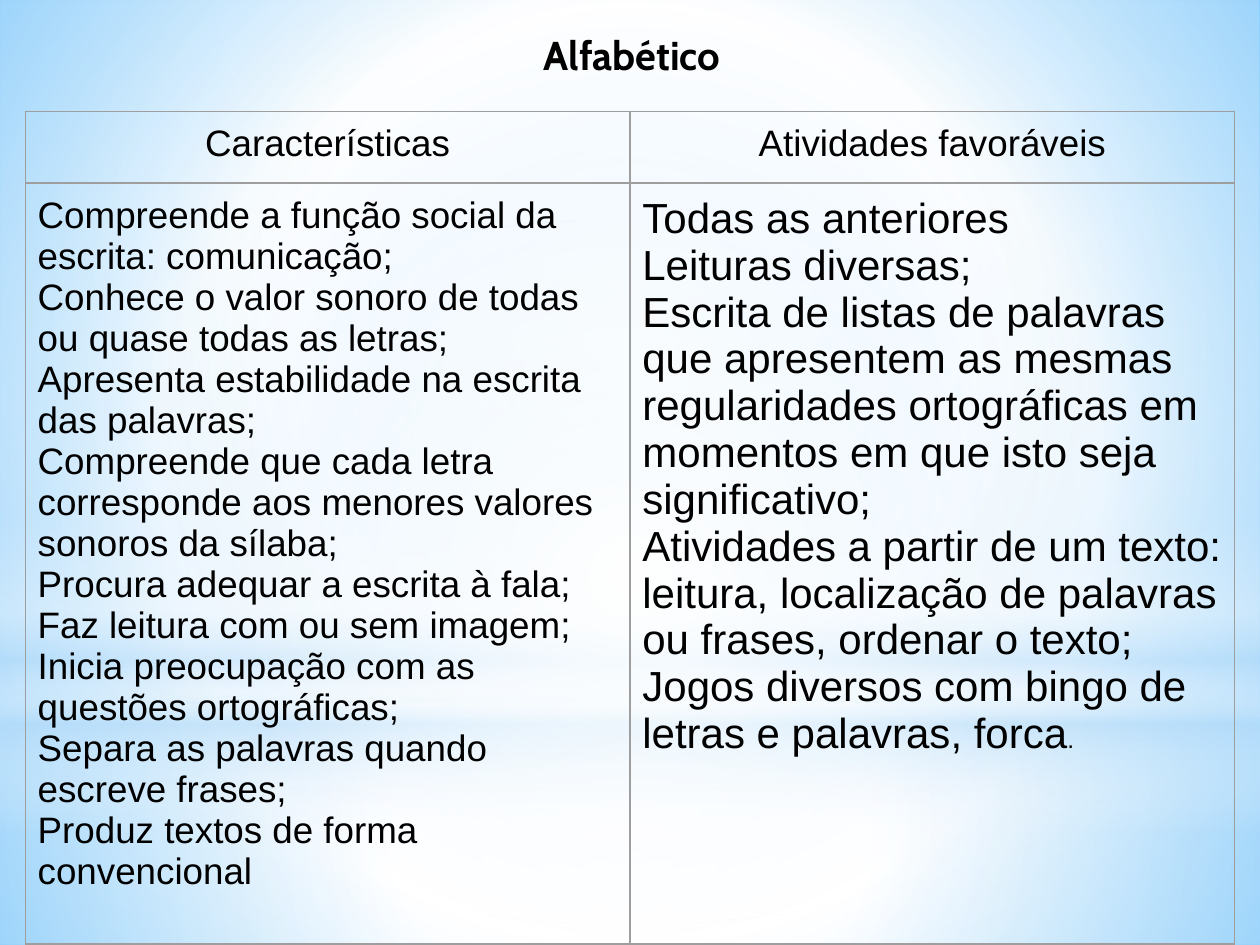
import lxml.etree
import pptx
import pptx.dml.color
import pptx.enum.shapes
import pptx.enum.text
import pptx.oxml.ns
import pptx.util

Cm, Pt = pptx.util.Cm, pptx.util.Pt
ALIGN = pptx.enum.text.PP_ALIGN
KIND = pptx.enum.shapes.MSO_SHAPE
WIDE, HIGH = 25.4, 19.05

COLORS = {
    "text": "000000",
    "grid": "9E9E9E",
    "white": "FFFFFF",
    "pale": "B4DCFA",
    "sky": "99D4FE",
    "blue": "54BDFF",
}

# Gradient stops: position %, colour, opacity %
BACK = [(0, "sky", 100), (60, "white", 100), (100, "blue", 100)]
LOWER = [(0, "white", 89), (37, "white", 74), (100, "pale", 77)]
UPPER = [(0, "white", 87), (48, "white", 60), (100, "pale", 77)]
STREAK = [(0, "white", 0), (29, "white", 28), (45, "pale", 40),
          (55, "white", 24), (65, "pale", 60), (100, "white", 0)]
GLOW = [(0, "white", 100), (56, "white", 0), (100, "white", 0)]

# Preset, top, height, stops, angle (None for a circular gradient)
LAYERS = [
    (KIND.RECTANGLE, 14.17, 4.88, LOWER, None),
    (KIND.RECTANGLE, 0, 14.17, UPPER, None),
    (KIND.RECTANGLE, 10.46, 6.35, STREAK, 90),
    (KIND.OVAL, 4.45, 14.17, GLOW, None),
]

HEADS = ["Características", "Atividades favoráveis"]
TRAITS = [
    "Compreende a função social da escrita: comunicação;",
    "Conhece o valor sonoro de todas ou quase todas as letras;",
    "Apresenta estabilidade na escrita das palavras;",
    "Compreende que cada letra corresponde aos menores valores sonoros "
    "da sílaba;",
    "Procura adequar a escrita à fala;",
    "Faz leitura com ou sem imagem;",
    "Inicia preocupação com as questões ortográficas;",
    "Separa as palavras quando escreve frases;",
    "Produz textos de forma convencional",
]
TASKS = [
    "Todas as anteriores",
    "Leituras diversas;",
    "Escrita de listas de palavras que apresentem as mesmas regularidades "
    "ortográficas em momentos em que isto seja significativo;",
    "Atividades a partir de um texto: leitura, localização de palavras ou "
    "frases, ordenar o texto;",
    "Jogos diversos com bingo de letras e palavras, forca",
]

BODY = {"name": "Arial", "size": Pt(21)}
LARGE = {"name": "Arial", "size": Pt(24)}
SMALL = {"name": "Arial", "size": Pt(14)}
TITLE = {"name": "Cabin", "size": Pt(23), "bold": True}
INSETS = {"margin_" + side: Cm(0.25)
          for side in ("left", "top", "right", "bottom")}


def apply(thing, form):
    for name, value in form.items():
        setattr(thing, name, value)


def add(parent, tag, **attrs):
    return lxml.etree.SubElement(parent, pptx.oxml.ns.qn(tag), attrs)


class Deck:
    """Holds the presentation's style and its current slide."""

    def __init__(self):
        self.prs = pptx.Presentation()
        apply(self.prs, {"slide_width": Cm(WIDE), "slide_height": Cm(HIGH)})
        self.slide = self.prs.slides.add_slide(self.prs.slide_layouts[5])

    def blend(self, fill, owner, stops, angle=None):
        """Give a fill its stops, circular unless an angle is set."""
        fill.gradient()
        grad = owner.xpath(".//a:gradFill")[0]
        for child in list(grad):
            grad.remove(child)
        group = add(grad, "a:gsLst")
        for pos, color, alpha in stops:
            stop = add(group, "a:gs", pos=str(pos * 1000))
            tone = add(stop, "a:srgbClr", val=COLORS[color])
            if alpha < 100:
                add(tone, "a:alpha", val=str(alpha * 1000))
        if angle is None:
            route = add(grad, "a:path", path="circle")
            add(route, "a:fillToRect", l="50000", t="50000",
                r="50000", b="50000")
        else:
            add(grad, "a:lin", ang=str(angle * 60000), scaled="0")

    def back(self, stops):
        self.blend(self.slide.background.fill, self.slide.element, stops)

    def layer(self, kind, top, high, stops, angle):
        shape = self.slide.shapes.add_shape(
            kind, 0, Cm(top), Cm(WIDE), Cm(high))
        shape.shadow.inherit = False
        shape.line.fill.background()
        self.blend(shape.fill, shape.element, stops, angle)

    def text(self, para, words, form, align=ALIGN.LEFT):
        para.alignment = align
        run = para.add_run()
        run.text = words
        apply(run.font, form)
        run.font.color.rgb = pptx.dml.color.RGBColor.from_string(
            COLORS["text"])

    def title(self, words, left, top, wide, high):
        shape = self.slide.shapes.title
        apply(shape, {"left": Cm(left), "top": Cm(top),
                      "width": Cm(wide), "height": Cm(high)})
        frame = shape.text_frame
        apply(frame, INSETS | {
            "word_wrap": True,
            "auto_size": pptx.enum.text.MSO_AUTO_SIZE.NONE,
            "vertical_anchor": pptx.enum.text.MSO_ANCHOR.TOP,
        })
        self.text(frame.paragraphs[0], words, TITLE, ALIGN.CENTER)
        shape.element.getparent().append(shape.element)  # bring to front

    def table(self, left, top, cols, rows):
        frame = self.slide.shapes.add_table(
            len(rows), len(cols), Cm(left), Cm(top),
            Cm(sum(cols)), Cm(sum(rows)))
        table = frame.table
        apply(table, {"first_row": False, "horz_banding": False})
        for col, wide in zip(table.columns, cols):
            col.width = Cm(wide)
        for row, high in zip(table.rows, rows):
            row.height = Cm(high)
        for cell in table.iter_cells():
            apply(cell, INSETS)
            cell.fill.background()
            self.border(cell)
        return table

    def border(self, cell):
        props = cell._tc.get_or_add_tcPr()
        for place, tag in enumerate(("a:lnL", "a:lnR", "a:lnT", "a:lnB")):
            line = add(props, tag, w=str(Pt(0.75)))
            add(add(line, "a:solidFill"), "a:srgbClr", val=COLORS["grid"])
            props.insert(place, line)

    def fill(self, cell, lines, form, align=ALIGN.LEFT):
        """Fill a cell with paragraphs and return the last one."""
        frame = cell.text_frame
        for index, words in enumerate(lines):
            para = frame.add_paragraph() if index else frame.paragraphs[0]
            self.text(para, words, form, align)
        return para


def main():
    deck = Deck()
    deck.back(BACK)
    for layer in LAYERS:
        deck.layer(*layer)
    table = deck.table(0.51, 2.24, [12.19, 12.19], [1.45, 15.34])
    for col, head in enumerate(HEADS):
        deck.fill(table.cell(0, col), [head], BODY, ALIGN.CENTER)
    deck.fill(table.cell(1, 0), TRAITS, BODY)
    last = deck.fill(table.cell(1, 1), TASKS, LARGE)
    deck.text(last, ".", SMALL)
    deck.title("Alfabético", 2.56, 0.36, 20.37, 1.5)
    deck.prs.save("out.pptx")


if __name__ == "__main__":
    main()
